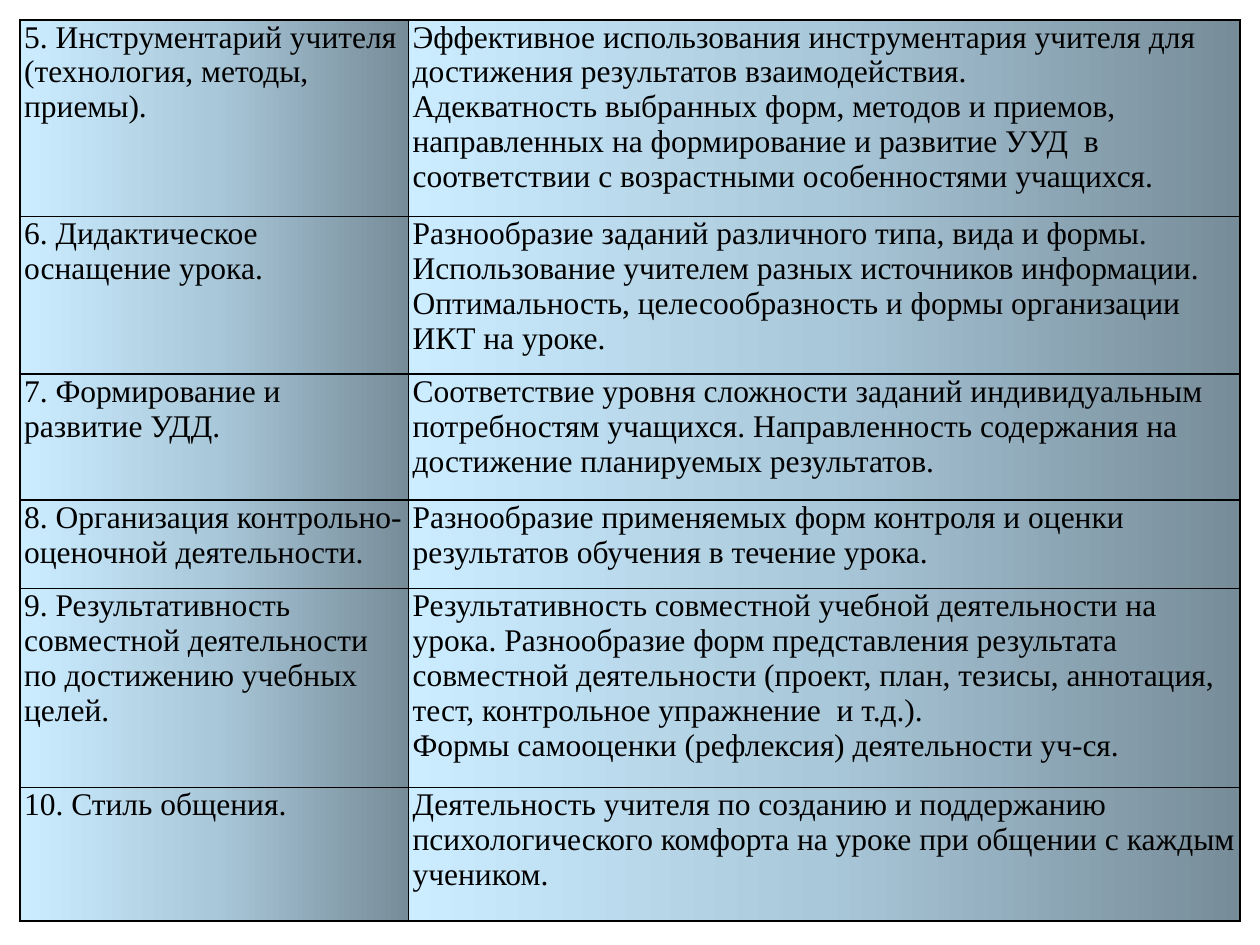
from dataclasses import dataclass

from lxml.etree import SubElement
from pptx import Presentation
from pptx.dml.color import RGBColor
from pptx.oxml.ns import qn
from pptx.table import _Cell as Cell
from pptx.util import Pt

COLORS = {
    "text": "000000",
    "border": "000000",
    "shade": "778C99",
    "middle": "A9C8DA",
    "light": "CCECFF",
}
GRADIENT = ((0, "shade"), (50, "middle"), (100, "light"))
FONT_NAME = "Times New Roman"
FONT_SIZE = Pt(18)
TABLE_LEFT, TABLE_TOP = Pt(11.4), Pt(11.4)
COLUMN_WIDTHS = (Pt(222), Pt(475.2))


@dataclass(frozen=True)
class Criterion:
    height: float  # points
    aspect: str
    indicators: tuple[str, ...]


CRITERIA = (
    Criterion(112.4, "5. Инструментарий учителя (технология, методы, приемы).", (
        "Эффективное использования инструментария учителя для достижения "
        "результатов взаимодействия.",
        "Адекватность выбранных форм, методов и приемов, направленных на "
        "формирование и развитие УУД  в соответствии с возрастными "
        "особенностями учащихся.",
    )),
    Criterion(90, "6. Дидактическое оснащение урока.", (
        "Разнообразие заданий различного типа, вида и формы.",
        "Использование учителем разных источников информации. "
        "Оптимальность, целесообразность и формы организации  ИКТ на уроке.",
    )),
    Criterion(72, "7. Формирование и развитие УДД.", (
        "Соответствие уровня сложности заданий индивидуальным потребностям "
        "учащихся. Направленность содержания на достижение планируемых "
        "результатов.",
    )),
    Criterion(50.6, "8. Организация контрольно-оценочной деятельности.", (
        "Разнообразие применяемых форм контроля и оценки результатов "
        "обучения в течение урока.",
    )),
    Criterion(113.6, "9. Результативность совместной деятельности по "
                     "достижению учебных целей.", (
        "Результативность совместной учебной деятельности на урока. "
        "Разнообразие форм представления результата совместной деятельности "
        "(проект, план, тезисы, аннотация, тест, контрольное упражнение  "
        "и т.д.).",
        "Формы самооценки (рефлексия) деятельности уч-ся.",
    )),
    Criterion(76.2, "10. Стиль общения.", (
        "Деятельность учителя по созданию и поддержанию психологического "
        "комфорта на уроке при общении с каждым учеником.",
    )),
)


def add_color(parent, color: str) -> None:
    SubElement(parent, qn("a:srgbClr"), val=COLORS[color])


def style_cell(cell: Cell) -> None:
    """Give a cell its margins, thin borders and left-to-right gradient."""
    cell.margin_left = cell.margin_right = Pt(2.4)
    cell.margin_top = cell.margin_bottom = Pt(0)
    properties = cell._tc.get_or_add_tcPr()

    # Borders come before the fill in the cell properties
    for side in ("lnL", "lnR", "lnT", "lnB"):
        border = SubElement(properties, qn(f"a:{side}"), w=str(Pt(1)))
        add_color(SubElement(border, qn("a:solidFill")), "border")

    gradient = SubElement(properties, qn("a:gradFill"), rotWithShape="1")
    stops = SubElement(gradient, qn("a:gsLst"))
    for percent, color in GRADIENT:
        add_color(SubElement(stops, qn("a:gs"), pos=str(percent * 1000)), color)
    SubElement(gradient, qn("a:lin"), ang=str(180 * 60000), scaled="1")


def write_cell(cell: Cell, lines: tuple[str, ...]) -> None:
    style_cell(cell)
    cell.text = "\n".join(lines)
    for paragraph in cell.text_frame.paragraphs:
        paragraph.font.name = FONT_NAME
        paragraph.font.size = FONT_SIZE
        paragraph.font.color.rgb = RGBColor.from_string(COLORS["text"])


def add_criteria_table(slide, criteria: tuple[Criterion, ...]) -> None:
    table = slide.shapes.add_table(
        len(criteria), len(COLUMN_WIDTHS), TABLE_LEFT, TABLE_TOP,
        sum(COLUMN_WIDTHS), Pt(sum(c.height for c in criteria)),
    ).table
    table.first_row = table.horz_banding = False
    for column, width in zip(table.columns, COLUMN_WIDTHS):
        column.width = width
    for row, criterion in zip(table.rows, criteria):
        row.height = Pt(criterion.height)
        aspect_cell, indicators_cell = row.cells
        write_cell(aspect_cell, (criterion.aspect,))
        write_cell(indicators_cell, criterion.indicators)


def main() -> None:
    deck = Presentation()
    deck.slide_width, deck.slide_height = Pt(720), Pt(540)
    slide = deck.slides.add_slide(deck.slide_layouts[6])
    add_criteria_table(slide, CRITERIA)
    deck.save("out.pptx")


if __name__ == "__main__":
    main()
